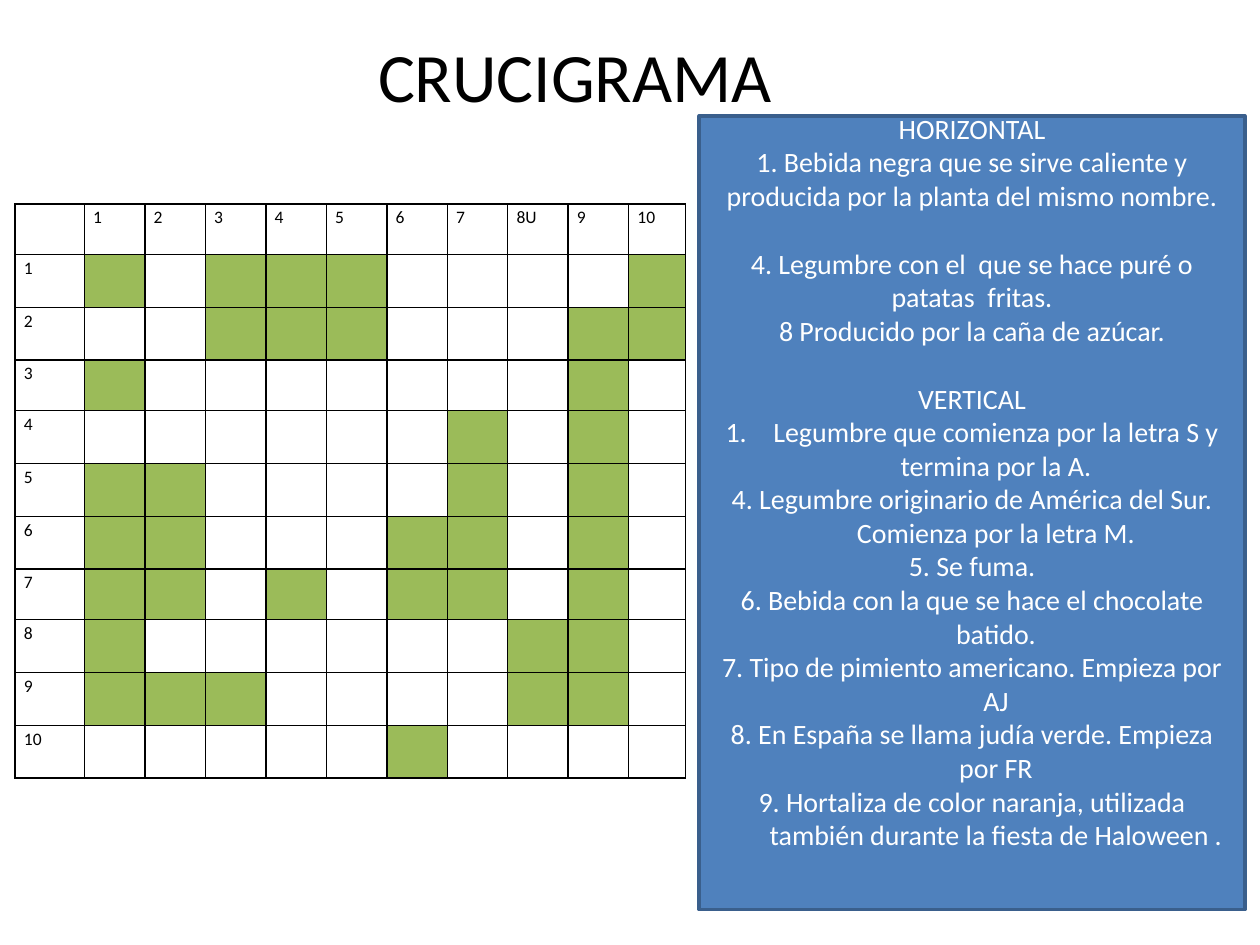
"""Build a crossword slide with a grid on the left and its clues on the right."""
from dataclasses import dataclass

from lxml import etree
from pptx import Presentation
from pptx import util as u
from pptx.dml.color import RGBColor
from pptx.enum import shapes, text
from pptx.oxml.ns import qn

COLORS = {"ink": "000000", "paper": "FFFFFF", "block": "9BBB59",
          "panel": "4F81BD", "edge": "3A5F8C"}
FONT = "Calibri"
SLIDE_WIDTH, SLIDE_HEIGHT = u.Inches(10), u.Inches(7.5)
CLUE_SIZE = 16
CLUE_LINE = 19.5
HANGING = u.Inches(0.38)


@dataclass(frozen=True)
class Frame:
    """A rectangle in percent of the slide's width and height."""
    left: float
    top: float
    width: float
    height: float

    def box(self) -> tuple[int, int, int, int]:
        return (across(self.left), down(self.top),
                across(self.width), down(self.height))


@dataclass(frozen=True)
class Clue:
    """One paragraph of the clue panel."""
    wording: str
    hanging: bool = False
    numbered: bool = False
    gap: bool = False


TITLE_FRAME = Frame(14.5, 3.87, 62.3, 8.13)
PANEL_FRAME = Frame(55.5, 12.27, 43.3, 84)
GRID_FRAME = Frame(1.2, 21.6, 53.2, 60.8)
COLUMN_SHARES = [5.5] + [4.8] * 9 + [4.5]
ROW_SHARES = [5.33 if row in (0, 3, 7) else 5.6 for row in range(11)]
COLUMN_LABELS = ["1", "2", "3", "4", "5", "6", "7", "8U", "9", "10"]
BLOCKS = [
    "#.###....#",
    "..###...##",
    "#.......#.",
    "......#.#.",
    "##....#.#.",
    "##...##.#.",
    "##.#.##.#.",
    "#......##.",
    "###....##.",
    ".....#....",
]
CLUES = [
    Clue("HORIZONTAL"),
    Clue("1. Bebida negra que se sirve caliente y producida por la planta "
         "del mismo nombre."),
    Clue("4. Legumbre con el  que se hace puré o patatas  fritas.", gap=True),
    Clue("8 Producido por la caña de azúcar."),
    Clue("VERTICAL", gap=True),
    Clue("Legumbre que comienza por la letra S y termina por la A.",
         hanging=True, numbered=True),
    Clue("4. Legumbre originario de América del Sur. Comienza por la letra M.",
         hanging=True),
    Clue("5. Se fuma.", hanging=True),
    Clue("6. Bebida con la que se hace el chocolate batido.", hanging=True),
    Clue("7. Tipo de pimiento americano. Empieza por AJ", hanging=True),
    Clue("8. En España se llama judía verde. Empieza por FR", hanging=True),
    Clue("9. Hortaliza de color naranja, utilizada también durante la fiesta "
         "de Haloween .", hanging=True),
]


def across(percent: float) -> int:
    return int(SLIDE_WIDTH * percent / 100)


def down(percent: float) -> int:
    return int(SLIDE_HEIGHT * percent / 100)


def color(name: str) -> RGBColor:
    return RGBColor.from_string(COLORS[name])


def format_spans(para, size: float, color_name: str) -> None:
    for span in para.runs:
        span.font.name = FONT
        span.font.size = u.Pt(size)
        span.font.color.rgb = color(color_name)


def draw_title(page, wording: str) -> None:
    title = page.shapes.title
    title.left, title.top, title.width, title.height = TITLE_FRAME.box()
    frame = title.text_frame
    frame.text = wording
    frame.auto_size = text.MSO_AUTO_SIZE.NONE
    frame.vertical_anchor = text.MSO_ANCHOR.MIDDLE
    para = frame.paragraphs[0]
    para.alignment = text.PP_ALIGN.CENTER
    format_spans(para, 39.6, "ink")


def draw_clue(para, clue: Clue) -> None:
    para.text = clue.wording
    para.alignment = text.PP_ALIGN.CENTER
    if clue.gap:
        para.space_before = u.Pt(CLUE_LINE)
    properties = para._p.get_or_add_pPr()
    if clue.hanging:
        properties.set("marL", str(HANGING))
        properties.set("indent", str(-HANGING))
    if clue.numbered:
        etree.SubElement(properties, qn("a:buAutoNum"), type="arabicPeriod")
    format_spans(para, CLUE_SIZE, "paper")


def draw_panel(page, clues: list[Clue]) -> None:
    panel = page.shapes.add_shape(shapes.MSO_SHAPE.RECTANGLE, *PANEL_FRAME.box())
    panel.shadow.inherit = False
    panel.fill.solid()
    panel.fill.fore_color.rgb = color("panel")
    panel.line.color.rgb = color("edge")
    panel.line.width = u.Pt(2)
    frame = panel.text_frame
    frame.word_wrap = True
    frame.vertical_anchor = text.MSO_ANCHOR.MIDDLE
    frame.margin_top, frame.margin_bottom = 0, u.Inches(0.5)
    for index, clue in enumerate(clues):
        draw_clue(frame.add_paragraph() if index else frame.paragraphs[0], clue)


def draw_borders(cell) -> None:
    properties = cell._tc.get_or_add_tcPr()
    for side in ("lnL", "lnR", "lnT", "lnB"):
        line = etree.SubElement(properties, qn(f"a:{side}"), w=str(u.Pt(1)))
        fill = etree.SubElement(line, qn("a:solidFill"))
        etree.SubElement(fill, qn("a:srgbClr"), val=COLORS["ink"])


def draw_cell(cell, label: str, fill_name: str) -> None:
    draw_borders(cell)
    cell.fill.solid()
    cell.fill.fore_color.rgb = color(fill_name)
    cell.margin_left = cell.margin_right = u.Inches(0.07)
    cell.margin_top = cell.margin_bottom = 0
    if label:
        para = cell.text_frame.paragraphs[0]
        para.text = label
        para.line_spacing = 1.15
        format_spans(para, 10, "ink")


def draw_crossword(page) -> None:
    table = page.shapes.add_table(
        len(ROW_SHARES), len(COLUMN_SHARES), *GRID_FRAME.box()).table
    table.first_row = table.horz_banding = False
    for column, share in zip(table.columns, COLUMN_SHARES):
        column.width = across(share)
    for row, share in zip(table.rows, ROW_SHARES):
        row.height = down(share)
    for index, label in enumerate([""] + COLUMN_LABELS):
        draw_cell(table.cell(0, index), label, "paper")
    for row, pattern in enumerate(BLOCKS, start=1):
        draw_cell(table.cell(row, 0), str(row), "paper")
        for column, mark in enumerate(pattern, start=1):
            draw_cell(table.cell(row, column), "",
                      "block" if mark == "#" else "paper")


def main() -> None:
    deck = Presentation()
    deck.slide_width, deck.slide_height = SLIDE_WIDTH, SLIDE_HEIGHT
    page = deck.slides.add_slide(deck.slide_layouts[5])
    draw_title(page, "CRUCIGRAMA")
    draw_panel(page, CLUES)
    draw_crossword(page)
    deck.save("out.pptx")


if __name__ == "__main__":
    main()
